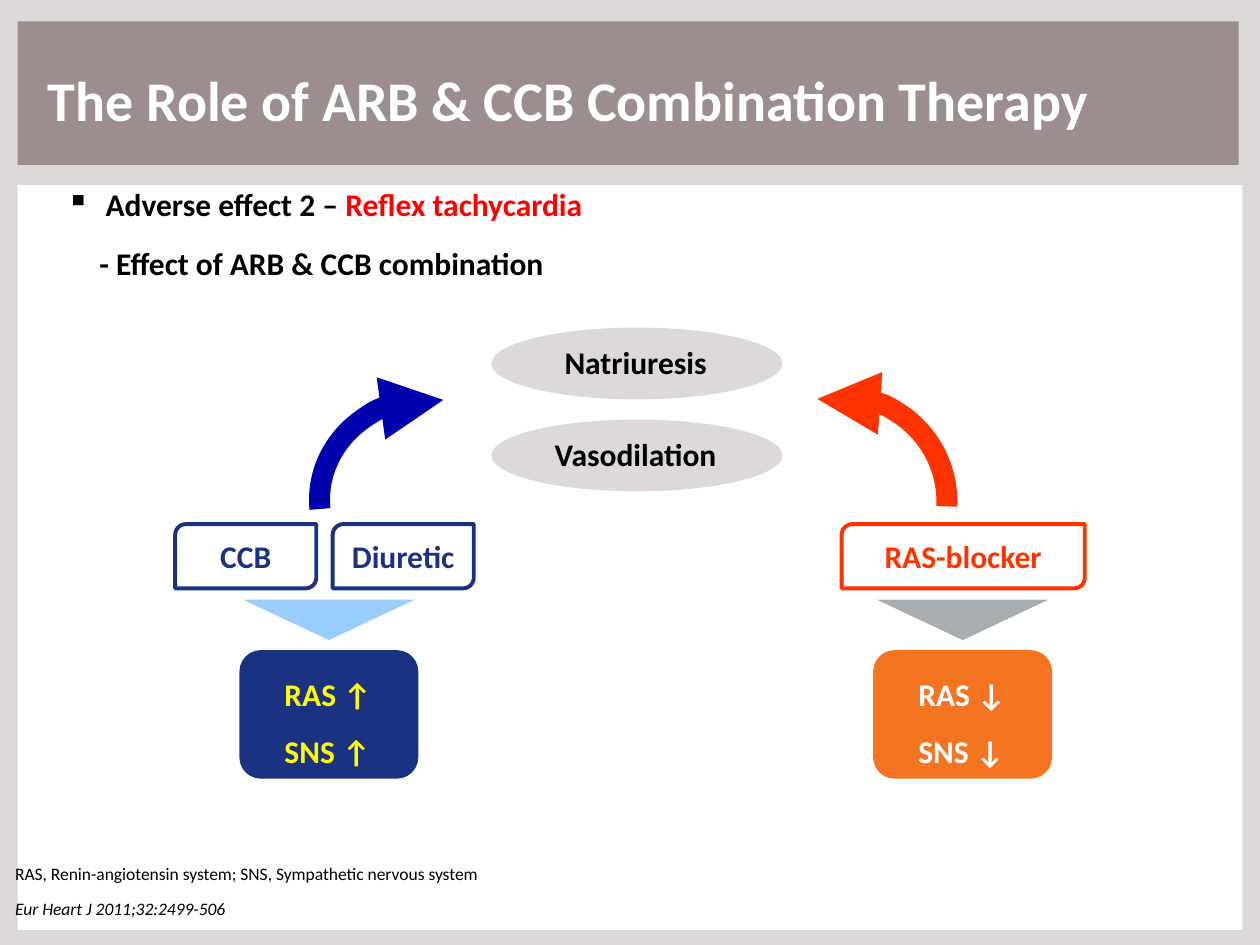
"""Build the slide on the role of ARB and CCB combination therapy."""
from dataclasses import dataclass

from lxml import etree
from pptx import Presentation
from pptx.dml.color import RGBColor
from pptx.enum import shapes, text
from pptx.oxml import ns
from pptx.util import Inches, Pt


@dataclass(frozen=True)
class Theme:
    font: str = "Calibri"
    title: int = 32
    body: int = 18
    note: int = 10
    mauve: str = "9C8E8E"
    pale: str = "DED9D9"
    white: str = "FFFFFF"
    black: str = "000000"
    red: str = "FF0000"
    navy: str = "1B3282"
    blue: str = "0000AC"
    sky: str = "99CCFF"
    yellow: str = "FFFF00"
    scarlet: str = "FF3300"
    orange: str = "F37521"
    grey: str = "A8ADB2"


theme = Theme()
kinds = shapes.MSO_SHAPE


def add_shape(kind, left, top, width, height, fill=None, line=None, weight=2.25):
    shape = page.shapes.add_shape(kind, Inches(left), Inches(top), Inches(width), Inches(height))
    shape.shadow.inherit = False
    if fill:
        shape.fill.solid()
        shape.fill.fore_color.rgb = RGBColor.from_string(fill)
    else:
        shape.fill.background()
    if line:
        shape.line.color.rgb = RGBColor.from_string(line)
        shape.line.width = Pt(weight)
    else:
        shape.line.fill.background()
    return shape


def write(box, lines, size, color, bold=True, italic=False, align=text.PP_ALIGN.LEFT,
          anchor=text.MSO_ANCHOR.TOP, wrap=False, spacing=None):
    frame = box.text_frame
    frame.text = "\n".join(lines)
    frame.word_wrap = wrap
    frame.vertical_anchor = anchor
    for para in frame.paragraphs:
        para.alignment = align
        para.line_spacing = spacing
        font = para.font
        font.name, font.size, font.bold, font.italic = theme.font, Pt(size), bold, italic
        font.color.rgb = RGBColor.from_string(color)
    return frame


deck = Presentation()
deck.slide_width, deck.slide_height = Inches(10), Inches(7.5)
page = deck.slides.add_slide(deck.slide_layouts[5])
page.background.fill.solid()
page.background.fill.fore_color.rgb = RGBColor.from_string(theme.pale)

add_shape(kinds.RECTANGLE, 0.14, 0.17, 9.69, 1.14, theme.mauve)
add_shape(kinds.RECTANGLE, 0.14, 1.47, 9.72, 5.91, theme.white)

title = page.shapes.title
title.left, title.top, title.width, title.height = map(Inches, (0.28, 0.47, 8.78, 0.64))
write(title, ["The Role of ARB & CCB Combination Therapy"], theme.title, theme.white)
title.text_frame.auto_size = text.MSO_AUTO_SIZE.NONE
page.shapes._spTree.append(title._element)

notes = [
    ("RAS, Renin-angiotensin system; SNS, Sympathetic nervous system", 6.85, 3.75, False),
    ("Eur Heart J 2011;32:2499-506", 7.13, 1.7, True),
]
for note, top, width, italic in notes:
    box = page.shapes.add_textbox(Inches(0.12), Inches(top), Inches(width), Inches(0.17))
    frame = write(box, [note], theme.note, theme.black, bold=False, italic=italic)
    frame.margin_left = frame.margin_top = frame.margin_right = frame.margin_bottom = 0

box = page.shapes.add_textbox(Inches(0.43), Inches(1.42), Inches(4.34), Inches(0.4))
para = write(box, ["Adverse effect 2 – "], theme.body, theme.black).paragraphs[0]
span = para.add_run()
span.text = "Reflex tachycardia"
span.font.color.rgb = RGBColor.from_string(theme.red)
properties = para._p.get_or_add_pPr()
properties.set("marL", str(Inches(0.31)))
properties.set("indent", str(Inches(-0.31)))
bullet = etree.Element(ns.qn("a:buChar"), char="▪")
properties.insert(0, bullet)

box = page.shapes.add_textbox(Inches(0.69), Inches(1.89), Inches(3.77), Inches(0.4))
write(box, ["- Effect of ARB & CCB combination"], theme.body, theme.black)

for effect, top in [("Natriuresis", 2.6), ("Vasodilation", 3.33)]:
    add_shape(kinds.OVAL, 3.9, top, 2.31, 0.57, theme.pale)
    box = page.shapes.add_textbox(Inches(4.3), Inches(top + 0.07), Inches(1.49), Inches(0.4))
    write(box, [effect], theme.body, theme.black, align=text.PP_ALIGN.CENTER)

drugs = [
    ("CCB", 1.39, 1.12, theme.navy),
    ("Diuretic", 2.64, 1.12, theme.navy),
    ("RAS-blocker", 6.68, 1.93, theme.scarlet),
]
for drug, left, width, color in drugs:
    box = add_shape(kinds.ROUND_2_DIAG_RECTANGLE, left, 4.16, width, 0.51, line=color)
    write(box, [drug], theme.body, color, align=text.PP_ALIGN.CENTER,
          anchor=text.MSO_ANCHOR.MIDDLE, wrap=True)

outcomes = [
    (1.9, "↑", theme.navy, theme.yellow, theme.sky),
    (6.93, "↓", theme.orange, theme.white, theme.grey),
]
for left, trend, fill, color, pointer_fill in outcomes:
    pointer = add_shape(kinds.ISOSCELES_TRIANGLE, left + 0.03, 4.76, 1.36, 0.32, pointer_fill)
    pointer.rotation = 180
    add_shape(kinds.ROUNDED_RECTANGLE, left, 5.16, 1.42, 1.02, fill)
    box = page.shapes.add_textbox(Inches(left + 0.26), Inches(5.16), Inches(0.9), Inches(1.01))
    write(box, [f"RAS {trend}", f"SNS {trend}"], theme.body, color, spacing=1.5)

arcs = [
    (2.59, 3.11, 1.58, 1.69, 264.3, False, theme.blue),
    (5.84, 3.14, 1.67, 1.68, 272.7, True, theme.scarlet),
]
for left, top, width, height, angle, flipped, color in arcs:
    arc = add_shape(kinds.ARC, left, top, width, height, line=color, weight=12)
    arc.rotation = angle
    arc.adjustments[0], arc.adjustments[1] = 162, 9.425
    if flipped:
        arc._element.spPr.xfrm.set("flipV", "1")
    etree.SubElement(arc.line._get_or_add_ln(), ns.qn("a:tailEnd"), type="triangle")

deck.save("out.pptx")
